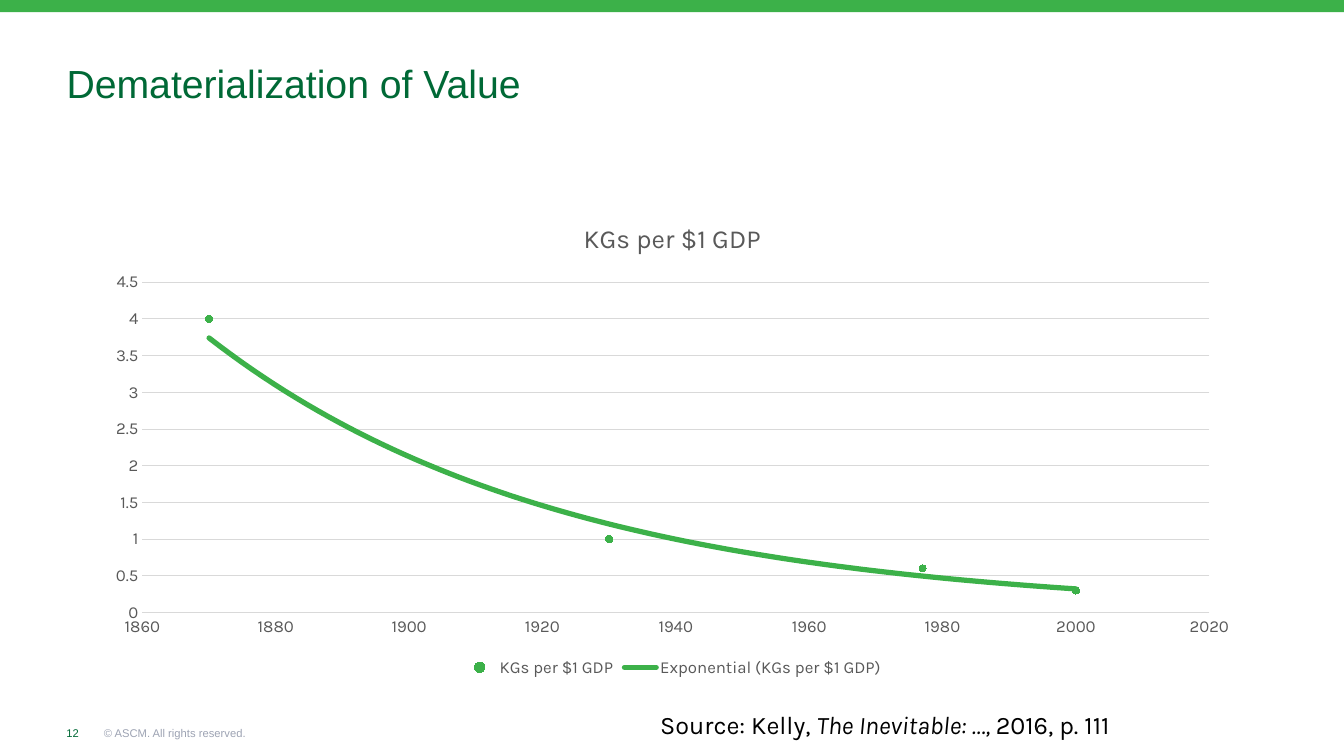
from lxml import etree
from pptx import Presentation
from pptx.chart.data import XyChartData
from pptx.dml.color import RGBColor
from pptx.enum.chart import (XL_CHART_TYPE, XL_LEGEND_POSITION,
                             XL_MARKER_STYLE, XL_TICK_MARK)
from pptx.enum.shapes import MSO_SHAPE
from pptx.enum.text import MSO_ANCHOR, PP_ALIGN
from pptx.oxml import parse_xml
from pptx.oxml.ns import nsdecls, qn
from pptx.util import Inches, Pt

GREEN, DARK, GREY, RULE = "3CB149", "006936", "595959", "D9D9D9"


def paint(color, value):
    color.rgb = RGBColor.from_string(value)


def style(font, name, size, value):
    font.name, font.size = name, Pt(size)
    paint(font.color, value)


deck = Presentation()
deck.slide_width, deck.slide_height = Inches(13.33), Inches(7.5)
slide = deck.slides.add_slide(deck.slide_layouts[5])
shapes = slide.shapes

# Top band
band = shapes.add_shape(MSO_SHAPE.RECTANGLE, 0, 0, Inches(13.33), Inches(0.12))
band.shadow.inherit = False
band.fill.solid()
paint(band.fill.fore_color, GREEN)
band.line.fill.background()

# Title
title = shapes.title
title.left, title.top = Inches(0.66), Inches(0.22)
title.width, title.height = Inches(12), Inches(0.84)
frame = title.text_frame
frame.text = "Dematerialization of Value"
frame.vertical_anchor = MSO_ANCHOR.BOTTOM
frame.margin_left = frame.margin_right = 0
frame.margin_top = frame.margin_bottom = 0
para = frame.paragraphs[0]
para.alignment, para.line_spacing = PP_ALIGN.LEFT, 0.9
style(para.font, "Arial", 28, DARK)

# Scatter chart with an exponential trend
data = XyChartData()
points = data.add_series("KGs per $1 GDP")
for year, weight in [(1870, 4), (1930, 1), (1977, 0.6), (2000, 0.3)]:
    points.add_data_point(year, weight)
chart = shapes.add_chart(XL_CHART_TYPE.XY_SCATTER, Inches(0.92), Inches(2),
                         Inches(11.5), Inches(4.76), data).chart
style(chart.font, "Karla", 10, "000000")
chart.has_title = True
head = chart.chart_title.text_frame
head.text = "KGs per $1 GDP"
style(head.paragraphs[0].font, "Karla", 18.6, GREY)
head.paragraphs[0].font.bold = False
chart.has_legend = True
chart.legend.position = XL_LEGEND_POSITION.BOTTOM
chart.legend.include_in_layout = False
style(chart.legend.font, "Karla", 12, GREY)

years, weights = chart.category_axis, chart.value_axis
for axis, low, high, step in [(years, 1860, 2020, 20), (weights, 0, 4.5, 0.5)]:
    axis.minimum_scale, axis.maximum_scale = low, high
    axis.major_unit = step
    axis.major_tick_mark = axis.minor_tick_mark = XL_TICK_MARK.NONE
    axis.tick_labels.number_format = "General"
    axis.tick_labels.number_format_is_linked = False
    style(axis.tick_labels.font, "Karla", 12, GREY)
years.has_major_gridlines = False
weights.has_major_gridlines = True
weights.format.line.fill.background()
for line in (years.format.line, weights.major_gridlines.format.line):
    paint(line.color, RULE)
    line.width = Pt(0.75)

plot = chart.plots[0]
plot.vary_by_categories = False
series = plot.series[0]
series.smooth = False
series.format.line.fill.background()
marker = series.marker
marker.style, marker.size = XL_MARKER_STYLE.CIRCLE, 5
marker.format.fill.solid()
paint(marker.format.fill.fore_color, GREEN)
paint(marker.format.line.color, GREEN)
trend = parse_xml(
    f'<c:trendline {nsdecls("c", "a")}><c:spPr>'
    f'<a:ln w="{Pt(3.75)}" cap="rnd"><a:solidFill><a:srgbClr val="{GREEN}"/>'
    '</a:solidFill></a:ln></c:spPr><c:trendlineType val="exp"/>'
    '<c:dispRSqr val="0"/><c:dispEq val="0"/></c:trendline>')
series._element.find(qn("c:xVal")).addprevious(trend)

# Source line
source = shapes.add_textbox(Inches(6.45), Inches(6.99), Inches(5.57), Inches(0.4))
source.text_frame.word_wrap = True
para = source.text_frame.paragraphs[0]
style(para.font, "Karla", 18, "000000")
for text, slant in [("Source: Kelly, ", False), ("The Inevitable: …, ", True),
                    ("2016, p. 111", False)]:
    run = para.add_run()
    run.text, run.font.italic = text, slant

# Footer: page number, then copyright at a tab stop
foot = shapes.add_textbox(Inches(0.66), Inches(7.16), Inches(2.5), Inches(0.24))
frame = foot.text_frame
frame.word_wrap = True
frame.margin_left = frame.margin_right = 0
para = frame.paragraphs[0]
tabs = etree.SubElement(para._p.get_or_add_pPr(), qn("a:tabLst"))
etree.SubElement(tabs, qn("a:tab"), pos=str(Inches(0.37)), algn="l")
para.font.name, para.font.size = "Arial", Pt(8)
for text, tint in [("12\t", DARK), ("© ASCM. All rights reserved.", "9DA3B3")]:
    run = para.add_run()
    run.text = text
    paint(run.font.color, tint)

deck.save("out.pptx")
